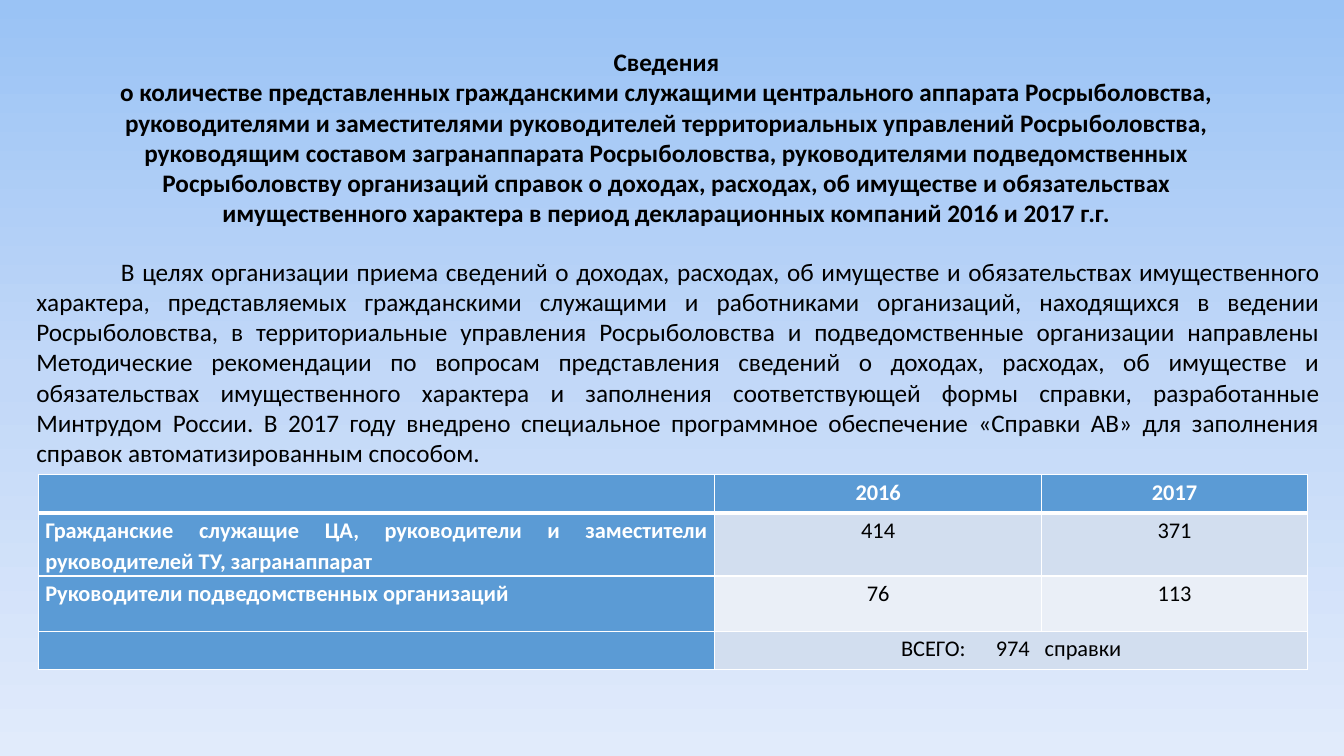
"""Builds the slide on income declarations filed in 2016 and 2017."""
from copy import deepcopy

from lxml import etree
from pptx import Presentation, util as u
from pptx.dml.color import RGBColor
from pptx.enum import text
from pptx.oxml.ns import qn

TITLE = [
    "Сведения",
    "о количестве представленных гражданскими служащими центрального аппарата "
    "Росрыболовства, руководителями и заместителями руководителей территориальных "
    "управлений Росрыболовства, руководящим составом загранаппарата Росрыболовства, "
    "руководителями подведомственных Росрыболовству организаций справок о доходах, "
    "расходах, об имуществе и обязательствах имущественного характера в период "
    "декларационных компаний 2016 и 2017 г.г.",
]
BODY = [
    "В целях организации приема сведений о доходах, расходах, об имуществе и "
    "обязательствах имущественного характера, представляемых гражданскими служащими "
    "и работниками организаций, находящихся в ведении Росрыболовства, в "
    "территориальные управления Росрыболовства и подведомственные организации "
    "направлены Методические рекомендации по вопросам представления сведений о "
    "доходах, расходах, об имуществе и обязательствах имущественного характера и "
    "заполнения соответствующей формы справки, разработанные Минтрудом России. "
    "В 2017 году внедрено специальное программное обеспечение «Справки АВ» для "
    "заполнения справок автоматизированным способом.",
]
ROWS = [
    ("", "2016", "2017"),
    ("Гражданские служащие ЦА, руководители и заместители руководителей ТУ, "
     "загранаппарат", "414", "371"),
    ("Руководители подведомственных организаций", "76", "113"),
    ("", "", ""),
]
TOTAL = [("ВСЕГО:", 0), (" ", 18), ("974", 0), (" ", 7), ("справки", 0)]
COLUMN_WIDTHS = (6.71, 3.24, 2.64)
ROW_HEIGHTS = (0.38, 0.6, 0.55, 0.38)

BLACK = RGBColor(0, 0, 0)
WHITE = RGBColor(255, 255, 255)
BLUE = RGBColor(0x5B, 0x9B, 0xD5)
BANDS = (RGBColor(0xEA, 0xEF, 0xF7), RGBColor(0xD2, 0xDE, 0xEF))
SKY = (
    (0, RGBColor(0x9A, 0xC3, 0xF5)),
    (0.5, RGBColor(0xC2, 0xD8, 0xF8)),
    (1, RGBColor(0xE1, 0xEB, 0xFB)),
)
CENTER, JUSTIFY = text.PP_ALIGN.CENTER, text.PP_ALIGN.JUSTIFY


def format_para(para, size, color, bold, align, spacing=1.0):
    para.font.name, para.font.size, para.font.bold = "Calibri", u.Pt(size), bold
    para.font.color.rgb = color
    para.alignment, para.line_spacing = align, spacing
    para.space_before = para.space_after = u.Pt(0)


def fill_placeholder(box, place, lines, bold, align, indent=0):
    box.left, box.top, box.width, box.height = map(u.Inches, place)
    frame = box.text_frame
    frame.text = "\n".join(lines)
    frame.word_wrap = True
    frame.auto_size = text.MSO_AUTO_SIZE.NONE
    frame.vertical_anchor = text.MSO_ANCHOR.TOP
    for para in frame.paragraphs:
        format_para(para, 18, BLACK, bold, align)
        props = para._p.get_or_add_pPr()
        props.set("marL", "0")
        props.set("indent", str(u.Inches(indent)))
        props.insert_element_before(etree.Element(qn("a:buNone")), "a:tabLst", "a:defRPr")


def paint_background(page):
    fill = page.background.fill
    fill.gradient()
    fill.gradient_angle = 270
    stops = page.element.find(".//" + qn("a:gsLst"))
    stops.append(deepcopy(stops[-1]))
    for stop, (position, color) in zip(fill.gradient_stops, SKY):
        stop.position, stop.color.rgb = position, color


def set_borders(cell, widths):
    props = cell._tc.get_or_add_tcPr()
    for index, (side, width) in enumerate(zip("LRTB", widths)):
        line = etree.Element(qn(f"a:ln{side}"), w=str(u.Pt(width)))
        solid = etree.SubElement(line, qn("a:solidFill"))
        etree.SubElement(solid, qn("a:srgbClr"), val=str(WHITE))
        props.insert(index, line)


def add_total(para):
    for words, tracking in TOTAL:
        span = para.add_run()
        span.text = words
        if tracking:
            span.font._element.set("spc", str(tracking * 100))


def add_counts(page):
    table = page.shapes.add_table(
        len(ROWS), len(COLUMN_WIDTHS), u.Inches(0.38), u.Inches(4.71),
        u.Inches(sum(COLUMN_WIDTHS)), u.Inches(sum(ROW_HEIGHTS))).table
    table.first_row = table.horz_banding = False
    for column, width in zip(table.columns, COLUMN_WIDTHS):
        column.width = u.Inches(width)
    for row, height in zip(table.rows, ROW_HEIGHTS):
        row.height = u.Inches(height)
    last = len(ROWS) - 1
    for r, row in enumerate(ROWS):
        for c, words in enumerate(row):
            cell = table.cell(r, c)
            heading = r == 0 or c == 0
            cell.text = words
            cell.margin_left = cell.margin_right = u.Inches(0.07)
            cell.margin_top = cell.margin_bottom = 0
            cell.fill.solid()
            cell.fill.fore_color.rgb = BLUE if heading else BANDS[r % 2]
            set_borders(cell, (1, 1, 3 if r == 1 else 1, 3 if r == 0 else 1))
            para = cell.text_frame.paragraphs[0]
            format_para(para, 16, WHITE if heading else BLACK, heading,
                        CENTER if c else JUSTIFY, 1.15)
    table.cell(last, 1).merge(table.cell(last, 2))
    add_total(table.cell(last, 1).text_frame.paragraphs[0])


def main():
    deck = Presentation()
    deck.slide_width, deck.slide_height = u.Inches(13.33), u.Inches(7.5)
    page = deck.slides.add_slide(deck.slide_layouts[1])
    paint_background(page)
    title, body = page.placeholders
    fill_placeholder(title, (0.83, 0.41, 11.56, 1.92), TITLE, True, CENTER)
    fill_placeholder(body, (0.26, 2.49, 12.93, 2.23), BODY, False, JUSTIFY, 0.84)
    add_counts(page)
    deck.save("out.pptx")


if __name__ == "__main__":
    main()
